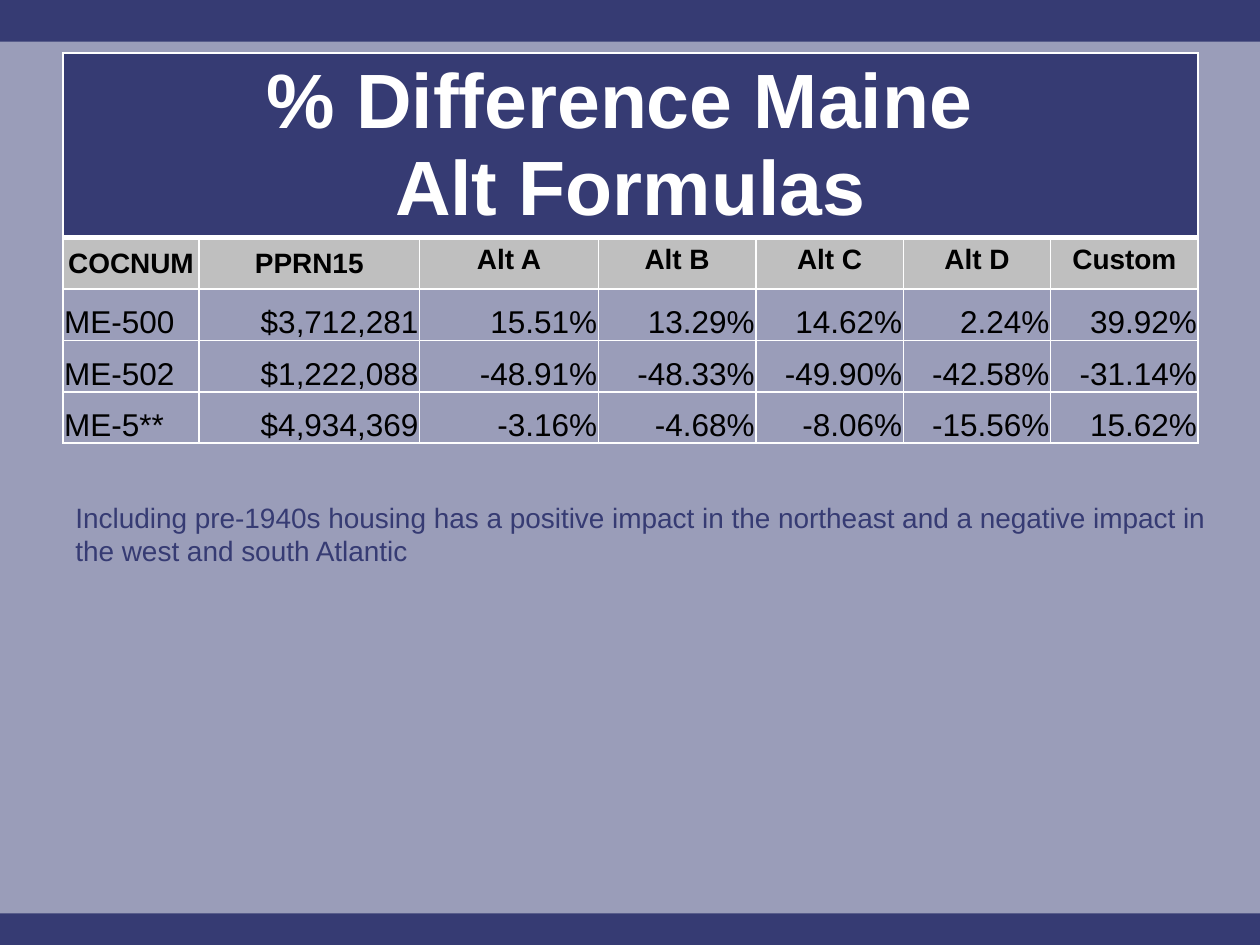
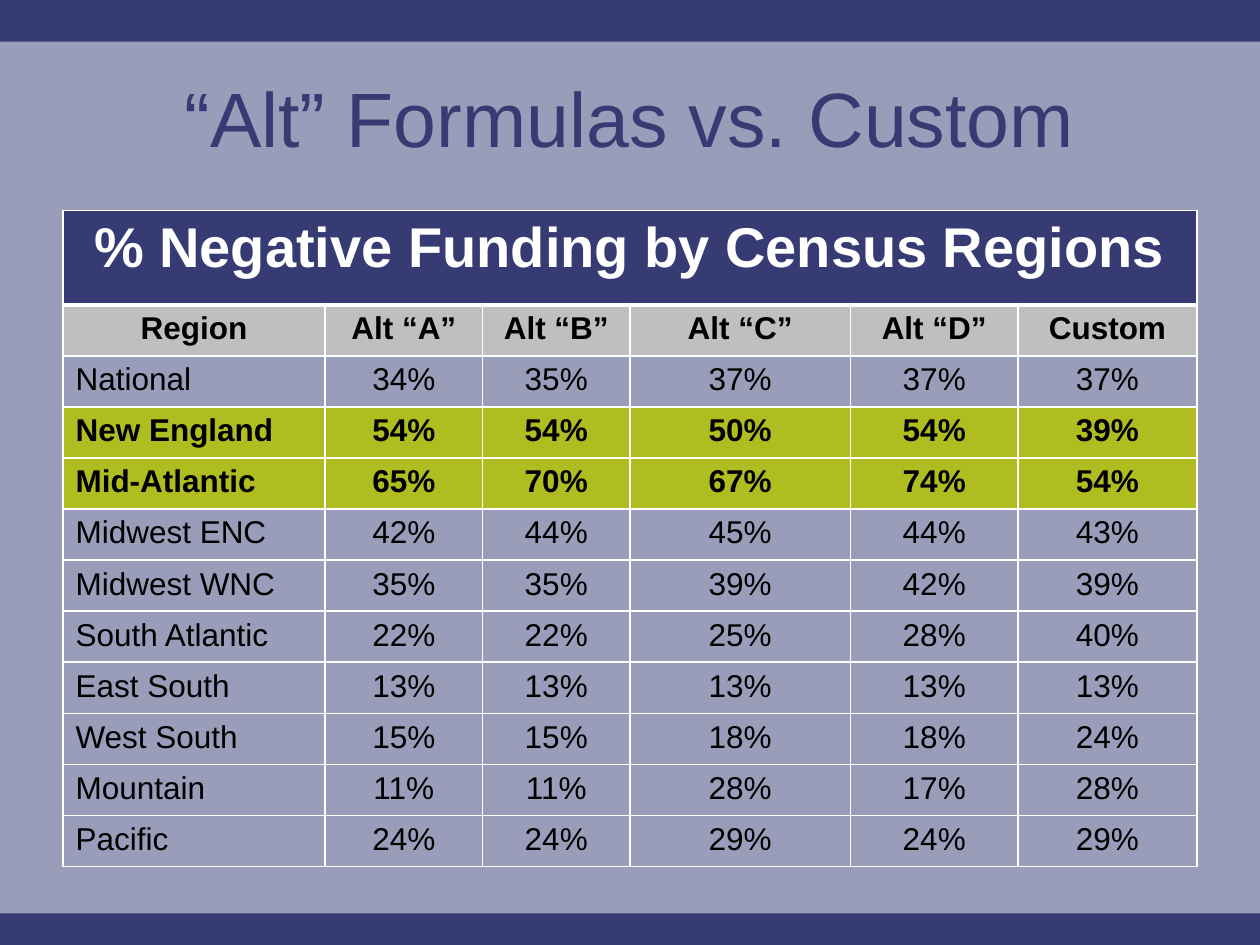
"""Build two slides that compare alternative funding formulas."""
from dataclasses import dataclass

from lxml import etree
from pptx import Presentation
from pptx.dml.color import RGBColor
from pptx.enum.shapes import MSO_SHAPE
from pptx.enum.text import MSO_ANCHOR, PP_ALIGN
from pptx.oxml.ns import qn
from pptx.util import Inches, Pt

RECTANGLE = MSO_SHAPE.RECTANGLE
TOP, MIDDLE, BOTTOM = MSO_ANCHOR.TOP, MSO_ANCHOR.MIDDLE, MSO_ANCHOR.BOTTOM
LEFT, CENTER, RIGHT = PP_ALIGN.LEFT, PP_ALIGN.CENTER, PP_ALIGN.RIGHT

COLORS = {"navy": "363B73", "white": "FFFFFF", "black": "000000",
          "gray": "BFBFBF", "lime": "AFBD20"}
FONT = "Arial"
TITLE_SIZE = 44
THIN, THICK = 1, 3
SIDES = ("lnL", "lnR", "lnT", "lnB")
TIGHT_MARGINS = {"margin_left": Inches(0.01), "margin_right": Inches(0.01),
                 "margin_top": Inches(0.01), "margin_bottom": Inches(0)}


@dataclass(frozen=True)
class TextStyle:
    size: int
    color: str = "black"
    bold: bool = False
    align: PP_ALIGN = CENTER
    anchor: MSO_ANCHOR = TOP


@dataclass(frozen=True)
class CellStyle:
    text: TextStyle
    fill: str = ""
    tight: bool = False


@dataclass(frozen=True)
class FundingTable:
    top: float
    height: float
    band_height: float
    band_lines: tuple[str, ...]
    band_size: int
    column_widths: tuple[float, ...]
    headers: tuple[str, ...]
    header_size: int
    tight_headers: tuple[str, ...]
    rows: tuple[tuple[str, ...], ...]
    value_align: PP_ALIGN
    anchor: MSO_ANCHOR
    tight: bool = False
    highlighted: tuple[str, ...] = ()


MAINE = FundingTable(
    top=0.42, height=3.09, band_height=1.46,
    band_lines=("% Difference Maine ", "Alt Formulas"), band_size=TITLE_SIZE,
    column_widths=(1.08, 1.75, 1.42, 1.25, 1.17, 1.17, 1.17),
    headers=("COCNUM", "PPRN15", "Alt A", "Alt B", "Alt C", "Alt D", "Custom"),
    header_size=16, tight_headers=("COCNUM", "PPRN15"),
    rows=(
        ("ME-500", "$3,712,281", "15.51%", "13.29%", "14.62%", "2.24%", "39.92%"),
        ("ME-502", "$1,222,088", "-48.91%", "-48.33%", "-49.90%", "-42.58%", "-31.14%"),
        ("ME-5**", "$4,934,369", "-3.16%", "-4.68%", "-8.06%", "-15.56%", "15.62%"),
    ),
    value_align=RIGHT, anchor=BOTTOM, tight=True)

REGIONS = FundingTable(
    top=1.67, height=5.21, band_height=0.75,
    band_lines=("% Negative Funding by Census Regions",), band_size=32,
    column_widths=(2.08, 1.25, 1.17, 1.75, 1.33, 1.42),
    headers=("Region", "Alt “A”", "Alt “B”", "Alt “C”", "Alt “D”", "Custom"),
    header_size=18, tight_headers=(),
    rows=(
        ("National", "34%", "35%", "37%", "37%", "37%"),
        ("New England", "54%", "54%", "50%", "54%", "39%"),
        ("Mid-Atlantic", "65%", "70%", "67%", "74%", "54%"),
        ("Midwest ENC", "42%", "44%", "45%", "44%", "43%"),
        ("Midwest WNC", "35%", "35%", "39%", "42%", "39%"),
        ("South Atlantic", "22%", "22%", "25%", "28%", "40%"),
        ("East South", "13%", "13%", "13%", "13%", "13%"),
        ("West South", "15%", "15%", "18%", "18%", "24%"),
        ("Mountain", "11%", "11%", "28%", "17%", "28%"),
        ("Pacific", "24%", "24%", "29%", "24%", "29%"),
    ),
    value_align=CENTER, anchor=TOP, highlighted=("New England", "Mid-Atlantic"))


def rgb(name: str) -> RGBColor:
    return RGBColor.from_string(COLORS[name])


def write_text(text_frame, lines: tuple[str, ...], style: TextStyle) -> None:
    formats = {"name": FONT, "size": Pt(style.size), "bold": style.bold}
    for index, line in enumerate(lines):
        paragraph = text_frame.add_paragraph() if index else text_frame.paragraphs[0]
        paragraph.alignment = style.align
        run = paragraph.add_run()
        run.text = line
        for attribute, value in formats.items():
            setattr(run.font, attribute, value)
        run.font.color.rgb = rgb(style.color)


def add_text_box(slide, left: float, top: float, width: float, height: float,
                 text: str, style: TextStyle) -> None:
    text_frame = slide.shapes.add_textbox(
        Inches(left), Inches(top), Inches(width), Inches(height)).text_frame
    text_frame.word_wrap = True
    text_frame.vertical_anchor = style.anchor
    write_text(text_frame, (text,), style)


def add_base_slide(presentation):
    slide = presentation.slides.add_slide(presentation.slide_layouts[6])
    slide.background.fill.solid()
    slide.background.fill.fore_color.rgb = rgb("navy")
    panel = slide.shapes.add_shape(
        RECTANGLE, Inches(0), Inches(0.33), Inches(10), Inches(6.92))
    panel.shadow.inherit = False
    panel.line.fill.background()
    panel.fill.solid()
    panel.fill.fore_color.rgb = rgb("white")
    color = panel.fill._xPr.find(".//" + qn("a:srgbClr"))
    etree.SubElement(color, qn("a:alpha"), val="50000")
    return slide


def set_borders(cell, thick_side: str) -> None:
    properties = cell._tc.get_or_add_tcPr()
    for side in SIDES:
        width = Pt(THICK if side == thick_side else THIN)
        line = etree.SubElement(properties, qn("a:" + side), w=str(width))
        fill = etree.SubElement(line, qn("a:solidFill"))
        etree.SubElement(fill, qn("a:srgbClr"), val=COLORS["white"])


def format_cell(cell, lines: tuple[str, ...], style: CellStyle,
                thick_side: str = "") -> None:
    set_borders(cell, thick_side)
    if style.fill:
        cell.fill.solid()
        cell.fill.fore_color.rgb = rgb(style.fill)
    else:
        cell.fill.background()
    cell.vertical_anchor = style.text.anchor
    if style.tight:
        for attribute, value in TIGHT_MARGINS.items():
            setattr(cell, attribute, value)
    write_text(cell.text_frame, lines, style.text)


def add_funding_table(slide, data: FundingTable) -> None:
    column_count = len(data.column_widths)
    row_count = len(data.rows) + 2
    table = slide.shapes.add_table(
        row_count, column_count, Inches(0.5), Inches(data.top),
        Inches(9), Inches(data.height)).table
    table.horz_banding = False
    for column, width in zip(table.columns, data.column_widths):
        column.width = Inches(width)
    row_height = (data.height - data.band_height) / (row_count - 1)
    for index, row in enumerate(table.rows):
        row.height = Inches(row_height if index else data.band_height)

    band_style = CellStyle(TextStyle(data.band_size, "white", True), "navy")
    table.cell(0, 0).merge(table.cell(0, column_count - 1))
    for column in range(column_count):
        lines = () if column else data.band_lines
        format_cell(table.cell(0, column), lines, band_style, "lnB")

    for column, header in enumerate(data.headers):
        tight = header in data.tight_headers
        text = TextStyle(data.header_size, bold=True, anchor=MIDDLE if tight else TOP)
        format_cell(table.cell(1, column), (header,),
                    CellStyle(text, "gray", tight), "lnT")

    for row_index, values in enumerate(data.rows, start=2):
        highlighted = values[0] in data.highlighted
        for column, value in enumerate(values):
            text = TextStyle(18, bold=highlighted, anchor=data.anchor,
                             align=data.value_align if column else LEFT)
            fill = "lime" if highlighted else ""
            format_cell(table.cell(row_index, column), (value,),
                        CellStyle(text, fill, data.tight))


def main() -> None:
    presentation = Presentation()
    presentation.slide_width = Inches(10)
    presentation.slide_height = Inches(7.5)

    maine_slide = add_base_slide(presentation)
    add_funding_table(maine_slide, MAINE)
    add_text_box(maine_slide, 0.5, 3.92, 9.5, 1.92,
                 "Including pre-1940s housing has a positive impact in the northeast "
                 "and a negative impact in the west and south Atlantic",
                 TextStyle(16, "navy", align=LEFT))

    regions_slide = add_base_slide(presentation)
    add_text_box(regions_slide, 0.5, 0.3, 9, 1.25, "“Alt” Formulas vs. Custom",
                 TextStyle(TITLE_SIZE, "navy", anchor=MIDDLE))
    add_funding_table(regions_slide, REGIONS)

    presentation.save("out.pptx")


if __name__ == "__main__":
    main()
